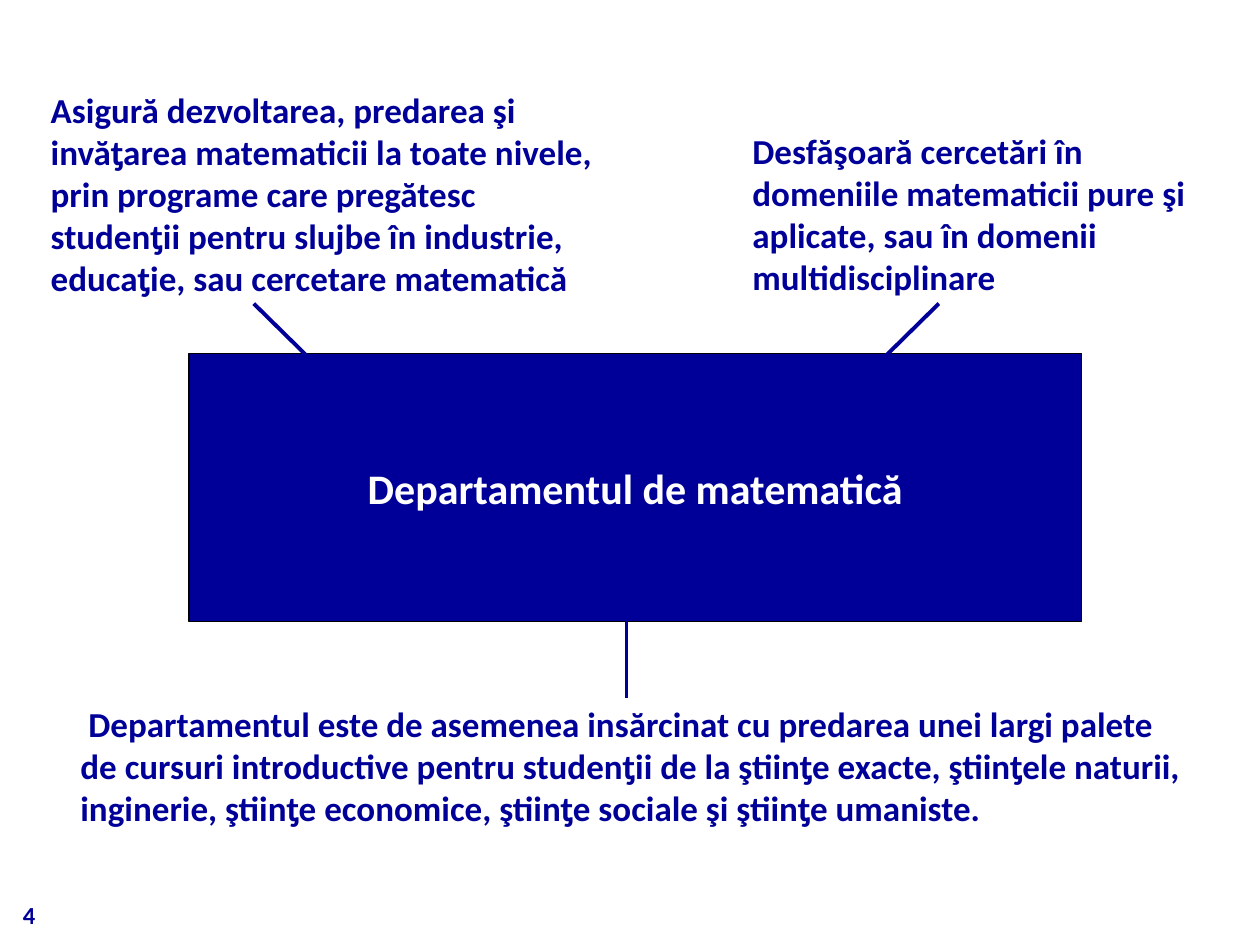
from pptx import Presentation
from pptx.dml.color import RGBColor
from pptx.enum.shapes import MSO_CONNECTOR, MSO_SHAPE
from pptx.enum.text import MSO_ANCHOR, PP_ALIGN
from pptx.oxml.ns import qn
from pptx.util import Pt
from lxml.etree import SubElement

HUES = {"navy": "000099", "white": "FFFFFF", "black": "000000"}
FONT = "Calibri"

ROLES = [
    ("Asigură dezvoltarea, predarea şi invăƫarea matematicii la toate nivele, "
     "prin programe care pregătesc studenƫii pentru slujbe în industrie, "
     "educaƫie, sau cercetare matematică", (24, 48, 324, 125.5)),
    ("Desfăşoară cercetări în domeniile matematicii pure şi aplicate, "
     "sau în domenii multidisciplinare", (425, 71.5, 258, 101)),
    (" Departamentul este de asemenea insărcinat cu predarea unei largi palete "
     "de cursuri introductive pentru studenƫii de la ştiinƫe exacte, "
     "ştiinƫele naturii, inginerie, ştiinƫe economice, ştiinƫe sociale "
     "şi ştiinƫe umaniste.", (41, 399, 642, 77)),
]
HUB = ("Departamentul de matematică", (108, 202, 510, 153))
PAGE = ("4", (6, 497, 168, 37.5))
LINKS = [
    (358, 351, 358, 399),
    (145, 173.5, 175, 203),
    (536.5, 173.5, 506.5, 203),
]
ROLE = {"margin_left": Pt(5), "margin_right": Pt(5),
        "margin_top": Pt(2.4), "margin_bottom": Pt(2.4)}


def hue(name):
    return RGBColor.from_string(HUES[name])


def assign(item, vals):
    for key, val in vals.items():
        setattr(item, key, val)


def write(shape, text, size, color, frame, align=PP_ALIGN.LEFT):
    body = shape.text_frame
    assign(body, {"word_wrap": True, **frame})
    para = body.paragraphs[0]
    para.alignment = align
    run = para.add_run()
    run.text = text
    assign(run.font, {"name": FONT, "size": Pt(size), "bold": True})
    run.font.color.rgb = hue(color)


def stroke(line, color, width):
    line.color.rgb = hue(color)
    line.width = Pt(width)


def label(slide, text, box, size, frame):
    shape = slide.shapes.add_textbox(*map(Pt, box))
    write(shape, text, size, "navy", frame)


def link(slide, ends):
    line = slide.shapes.add_connector(MSO_CONNECTOR.STRAIGHT, *map(Pt, ends))
    stroke(line.line, "navy", 2.25)
    SubElement(line._element.spPr, qn("a:effectLst"))


def hub(slide):
    text, box = HUB
    shape = slide.shapes.add_shape(MSO_SHAPE.RECTANGLE, *map(Pt, box))
    shape.shadow.inherit = False
    shape.fill.solid()
    shape.fill.fore_color.rgb = hue("navy")
    stroke(shape.line, "black", 0.75)
    write(shape, text, 24, "white",
          {"vertical_anchor": MSO_ANCHOR.MIDDLE}, PP_ALIGN.CENTER)


def main():
    deck = Presentation()
    assign(deck, {"slide_width": Pt(720), "slide_height": Pt(540)})
    slide = deck.slides.add_slide(deck.slide_layouts[6])
    hub(slide)
    for ends in LINKS:
        link(slide, ends)
    for text, box in ROLES:
        label(slide, text, box, 20, ROLE)
    label(slide, *PAGE, 14, {"vertical_anchor": MSO_ANCHOR.BOTTOM})
    deck.save("out.pptx")


if __name__ == "__main__":
    main()
